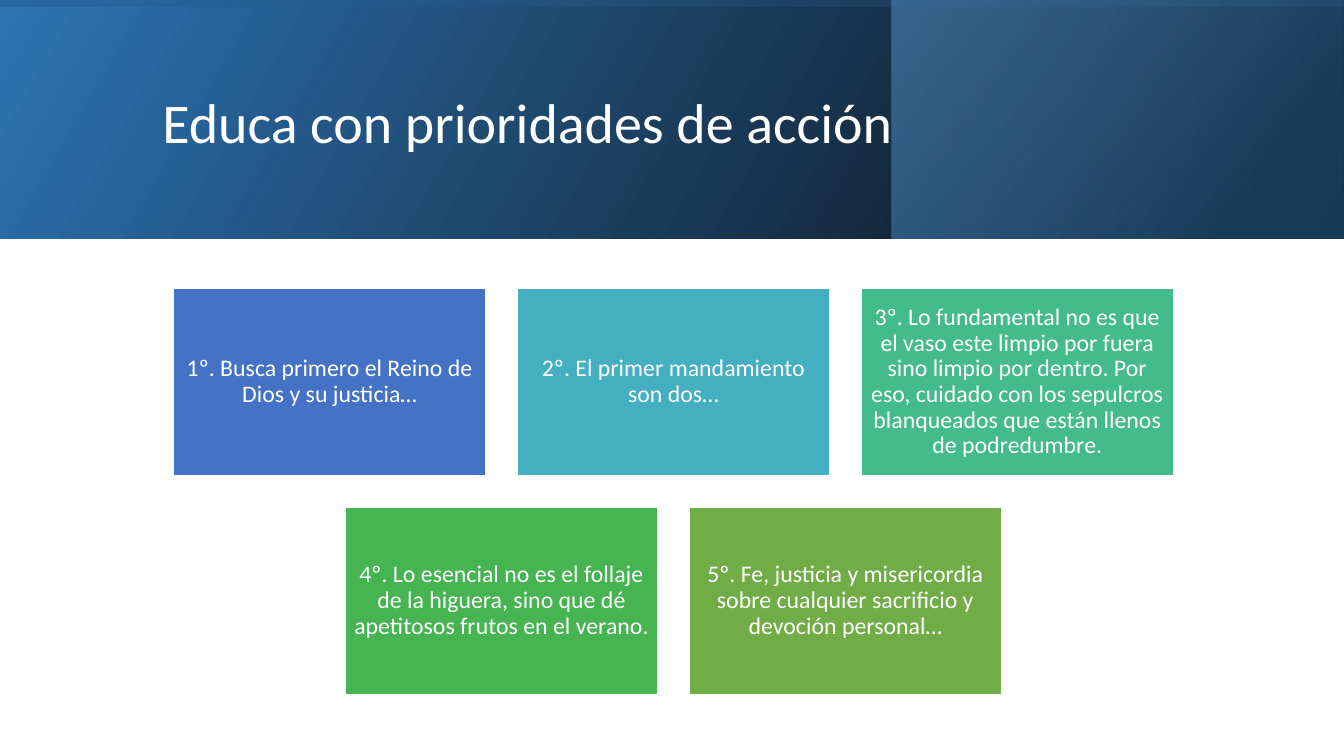
from lxml import etree
from pptx import Presentation
from pptx.dml.color import RGBColor
from pptx.enum.shapes import MSO_SHAPE
from pptx.enum.text import MSO_ANCHOR, PP_ALIGN
from pptx.oxml import parse_xml
from pptx.oxml.ns import nsdecls, qn
from pptx.util import Inches, Pt

RECTANGLE = MSO_SHAPE.RECTANGLE
MIDDLE = MSO_ANCHOR.MIDDLE
LEFT, CENTER = PP_ALIGN.LEFT, PP_ALIGN.CENTER
TITLE_ONLY = 5
FONT = "Calibri"

COLORS = {
    "white": "FFFFFF", "black": "000000", "navy": "1F4E79",
    "blue": "2E75B6", "sky": "5B9BD5",
    "royal": "4472C4", "teal": "43AFC0", "mint": "43BB8D",
    "green": "45B451", "olive": "70AD47",
}

# Left, top, width, height, rotation, gradient angle, stops (position, color, opacity)
BANDS = [
    (0, 0, 13.33, 2.37, 0, 330, [(0, "black", 96), (100, "blue", 100)]),
    (8.84, 0, 4.48, 2.37, 0, 320, [(19, "navy", 68), (100, "sky", 48)]),
    (5.48, -5.48, 2.37, 13.33, 270, 350, [(23, "blue", 16), (99, "black", 45)]),
]

CARD_ROWS = [
    [
        ("1º. Busca primero el Reino de Dios y su justicia…", "royal"),
        ("2º. El primer mandamiento son dos…", "teal"),
        ("3º. Lo fundamental no es que el vaso este limpio por fuera sino "
         "limpio por dentro. Por eso, cuidado con los sepulcros blanqueados "
         "que están llenos de podredumbre.", "mint"),
    ],
    [
        ("4º. Lo esencial no es el follaje de la higuera, sino que dé "
         "apetitosos frutos en el verano.", "green"),
        ("5º. Fe, justicia y misericordia sobre cualquier sacrificio y "
         "devoción personal…", "olive"),
    ],
]
CARD_WIDTH, CARD_HEIGHT, CARD_GAP = 3.1, 1.86, 0.31
CARDS_CENTER, CARDS_TOP = 6.68, 2.86


def rgb(name):
    return RGBColor.from_string(COLORS[name])


def add_rectangle(page, left, top, width, height):
    box = page.shapes.add_shape(
        RECTANGLE, Inches(left), Inches(top), Inches(width), Inches(height))
    box.shadow.inherit = False
    return box


def add_band(page, left, top, width, height, rotation, angle, stops):
    """Add a mirrored rectangle with a translucent gradient."""
    band = add_rectangle(page, left, top, width, height)
    band.rotation = rotation
    band.line.fill.background()
    properties = band._element.spPr
    properties.find(qn("a:xfrm")).set("flipH", "1")
    gradient = parse_xml(f'<a:gradFill {nsdecls("a")} rotWithShape="1"><a:gsLst/>'
                         f'<a:lin ang="{angle * 60000}" scaled="0"/></a:gradFill>')
    for position, color, opacity in stops:
        stop = etree.SubElement(gradient[0], qn("a:gs"), pos=str(position * 1000))
        tint = etree.SubElement(stop, qn("a:srgbClr"), val=COLORS[color])
        etree.SubElement(tint, qn("a:alpha"), val=str(opacity * 1000))
    properties.find(qn("a:prstGeom")).addnext(gradient)


def format_paragraph(para, size, alignment):
    para.alignment = alignment
    para.line_spacing = 0.9
    para.font.name = FONT
    para.font.size = Pt(size)
    para.font.color.rgb = rgb("white")


def place_title(page, text):
    """Fill the title placeholder and bring it in front of the bands."""
    title = page.shapes.title
    title.left, title.top = Inches(1.51), Inches(0.38)
    title.width, title.height = Inches(10.63), Inches(1.72)
    title.text_frame.text = text
    title.text_frame.vertical_anchor = MIDDLE
    format_paragraph(title.text_frame.paragraphs[0], 40, LEFT)
    page.shapes._spTree.append(title._element)


def add_card(page, left, top, text, color):
    card = add_rectangle(page, left, top, CARD_WIDTH, CARD_HEIGHT)
    card.fill.solid()
    card.fill.fore_color.rgb = rgb(color)
    card.line.color.rgb = rgb("white")
    card.line.width = Pt(1)
    frame = card.text_frame
    frame.word_wrap = True
    frame.vertical_anchor = MIDDLE
    frame.margin_left = frame.margin_right = Inches(0.07)
    frame.margin_top = frame.margin_bottom = Inches(0.07)
    frame.text = text
    format_paragraph(frame.paragraphs[0], 17, CENTER)


def add_card_rows(page):
    """Lay out each row of cards around the same center."""
    for row, cards in enumerate(CARD_ROWS):
        row_width = len(cards) * (CARD_WIDTH + CARD_GAP) - CARD_GAP
        top = CARDS_TOP + row * (CARD_HEIGHT + CARD_GAP)
        for column, (text, color) in enumerate(cards):
            left = CARDS_CENTER - row_width / 2 + column * (CARD_WIDTH + CARD_GAP)
            add_card(page, left, top, text, color)


def main():
    deck = Presentation()
    deck.slide_width, deck.slide_height = Inches(13.33), Inches(7.5)
    page = deck.slides.add_slide(deck.slide_layouts[TITLE_ONLY])
    for band in BANDS:
        add_band(page, *band)
    place_title(page, "Educa con prioridades de acción")
    add_card_rows(page)
    deck.save("out.pptx")


if __name__ == "__main__":
    main()
